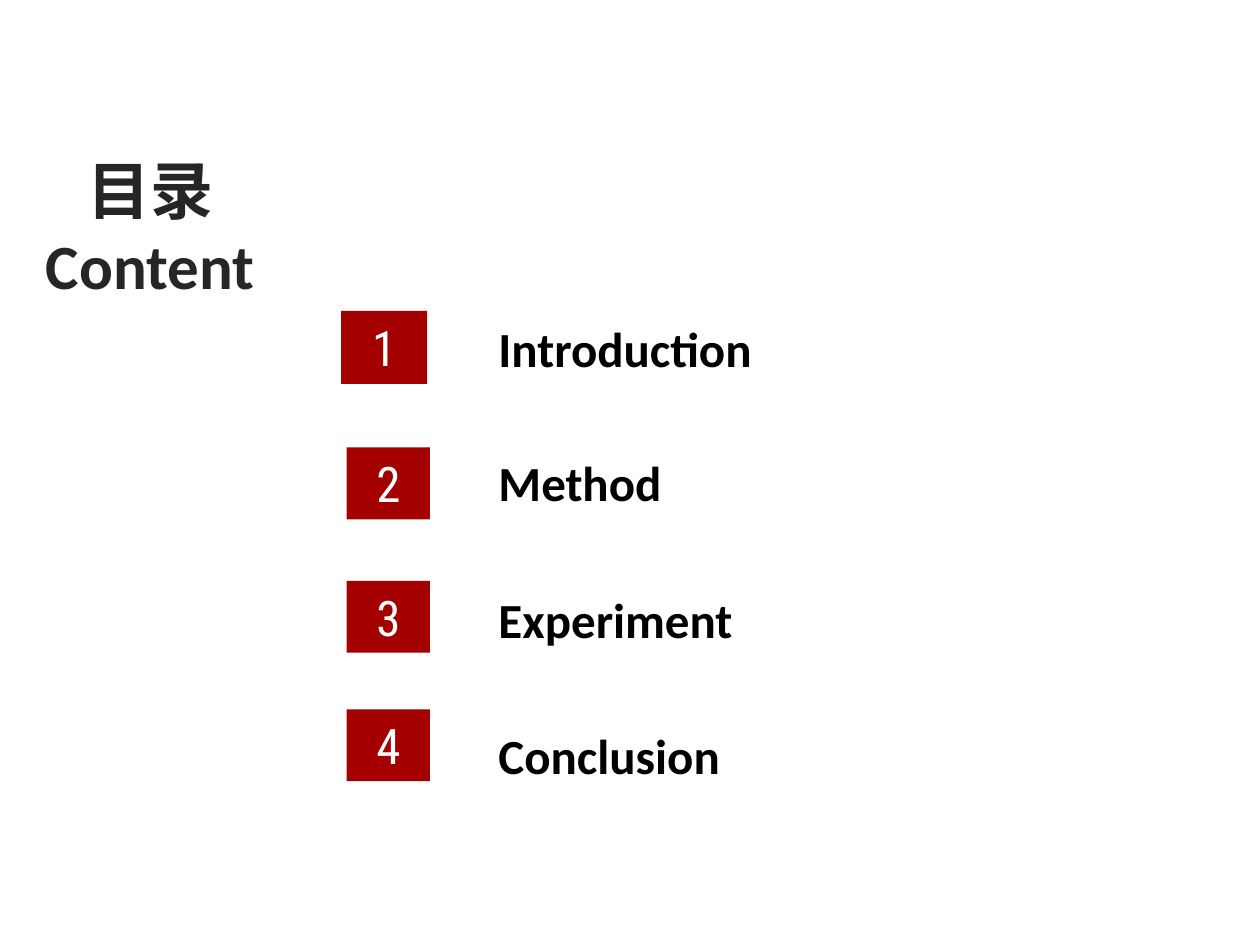
from pptx import Presentation
from pptx.dml.color import RGBColor
from pptx.enum.shapes import MSO_SHAPE as Shape
from pptx.enum.text import MSO_ANCHOR as Anchor, PP_ALIGN as Align
from pptx.util import Cm, Pt

COLORS = {"title": "262626", "entry": "000000", "badge": "A40000", "number": "FFFFFF"}


def write(frame, text, font_name, size, color, bold, align):
    frame.text = text
    frame.word_wrap = True
    frame.vertical_anchor = Anchor.TOP
    for paragraph in frame.paragraphs:
        paragraph.alignment = align
        paragraph.font.name = font_name
        paragraph.font.size = Pt(size)
        paragraph.font.bold = bold
        paragraph.font.color.rgb = RGBColor.from_string(COLORS[color])


presentation = Presentation()
presentation.slide_width, presentation.slide_height = Cm(25.4), Cm(19.05)
slide = presentation.slides.add_slide(presentation.slide_layouts[5])

# Heading
heading = slide.shapes.title
heading.left, heading.top, heading.width, heading.height = Cm(0.18), Cm(2.92), Cm(5.69), Cm(3.33)
write(heading.text_frame, "目录\nContent", "Calibri", 36, "title", True, Align.CENTER)

# Chapters: name, entry top, entry width, badge left, top, width and height
chapters = [
    ("Introduction", 6.3, 11.76, 6.88, 6.27, 1.73, 1.47),
    ("Method", 8.99, 12.32, 6.99, 9.02, 1.68, 1.45),
    ("Experiment", 11.76, 15.6, 6.99, 11.71, 1.68, 1.45),
    ("Conclusion", 14.5, 15.6, 6.99, 14.3, 1.68, 1.45),
]
for number, (name, entry_top, entry_width, *badge_box) in enumerate(chapters, start=1):
    badge = slide.shapes.add_shape(Shape.RECTANGLE, *map(Cm, badge_box))
    badge.shadow.inherit = False
    badge.fill.solid()
    badge.fill.fore_color.rgb = RGBColor.from_string(COLORS["badge"])
    badge.line.fill.background()
    write(badge.text_frame, str(number), "Roboto Condensed", 28, "number", False, Align.CENTER)

    entry = slide.shapes.add_textbox(Cm(9.8), Cm(entry_top), Cm(entry_width), Cm(1.45))
    write(entry.text_frame, name, "Calibri", 28, "entry", True, Align.LEFT)

presentation.save("out.pptx")
